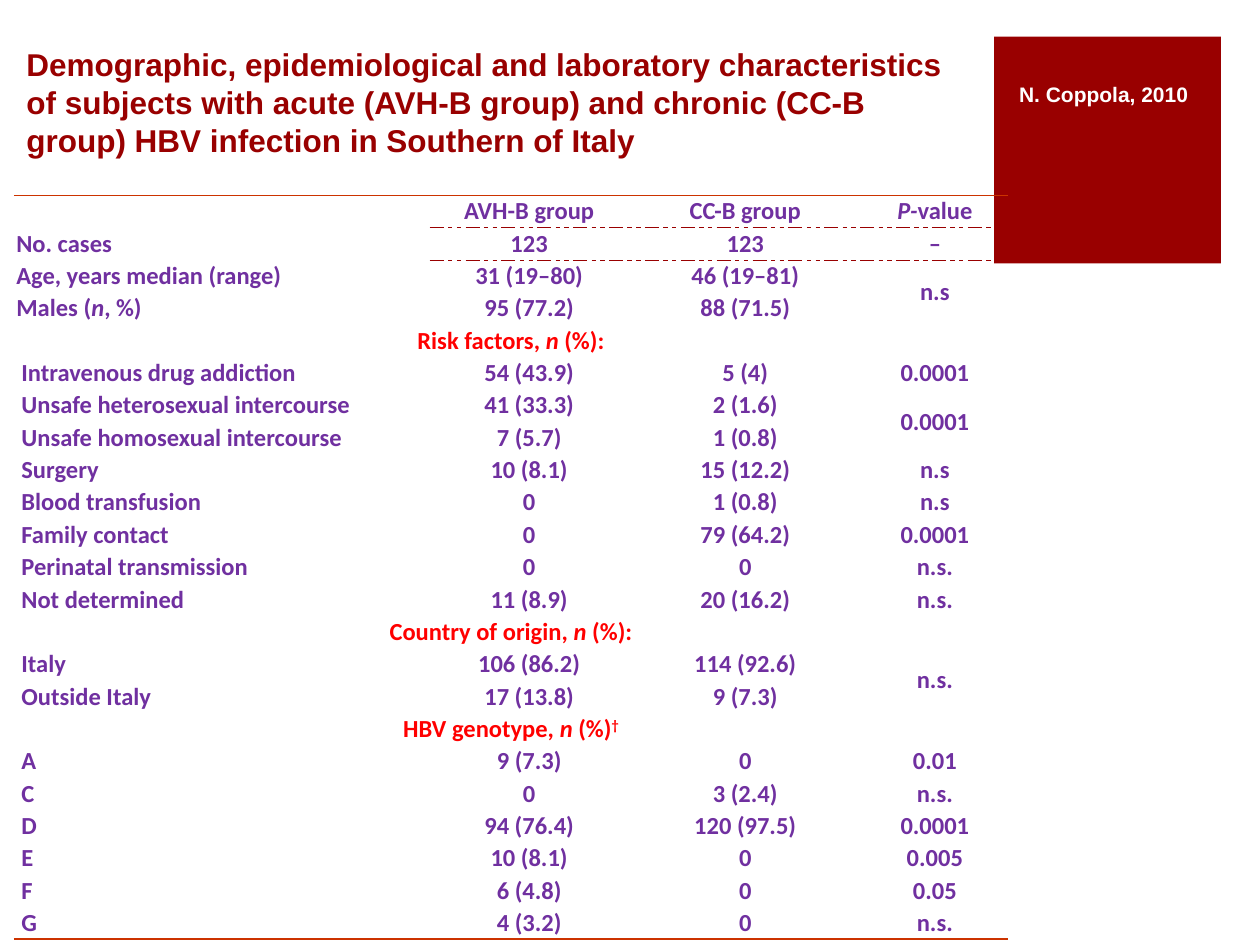
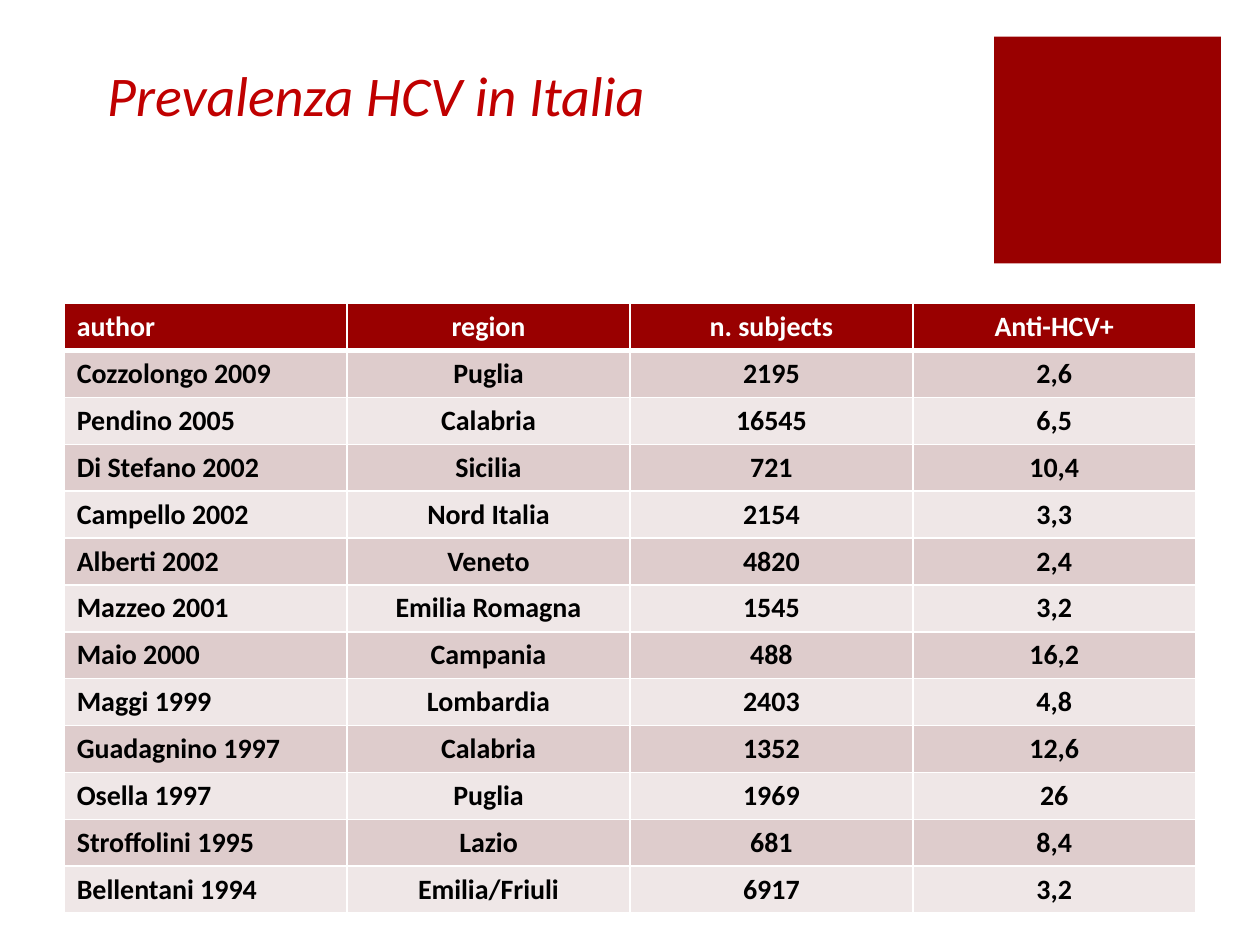
from lxml.etree import SubElement
from pptx import Presentation
from pptx.dml.color import RGBColor
from pptx.enum.shapes import MSO_SHAPE
from pptx.enum.text import MSO_ANCHOR, MSO_AUTO_SIZE, PP_ALIGN
from pptx.oxml.ns import qn
from pptx.util import Inches, Pt

THEME = {
    "band": "990000",
    "rule": "CC3300",
    "white": "FFFFFF",
    "stripes": ["EFE7E7", "DECCCC"],
    "heading": {"name": "Arial", "size": 18, "bold": True, "color": "990000"},
    "credit": {"name": "Arial", "size": 12, "bold": True, "color": "FFFFFF"},
    "display": {"name": "Calibri", "size": 32, "italic": True, "color": "C00000"},
    "patient": {"name": "Calibri", "size": 14, "bold": True, "color": "7030A0"},
    "section": {"name": "Calibri", "size": 14, "bold": True, "color": "FF0000"},
    "study_head": {"name": "Calibri", "size": 16, "bold": True, "color": "FFFFFF"},
    "study": {"name": "Calibri", "size": 16, "bold": True, "color": "000000"},
}
NO_STYLE = "{2D5ABB26-0587-4C30-8999-92F81FD0307C}"
ITALIC_PARTS = ("n", "P-")

PATIENTS = [
    ["", "AVH-B group", "CC-B group", "P-|value"],
    ["No. cases", "123", "123", "–"],
    ["Age, years median (range)", "31 (19–80)", "46 (19–81)", "n.s"],
    ["Males (|n|, %)", "95 (77.2)", "88 (71.5)", None],
    ["Risk factors, |n| (%):"],
    ["Intravenous drug addiction", "54 (43.9)", "5 (4)", "0.0001"],
    ["Unsafe heterosexual intercourse", "41 (33.3)", "2 (1.6)", "0.0001"],
    ["Unsafe homosexual intercourse", "7 (5.7)", "1 (0.8)", None],
    ["Surgery", "10 (8.1)", "15 (12.2)", "n.s"],
    ["Blood transfusion", "0", "1 (0.8)", "n.s"],
    ["Family contact", "0", "79 (64.2)", "0.0001"],
    ["Perinatal transmission", "0", "0", "n.s."],
    ["Not determined", "11 (8.9)", "20 (16.2)", "n.s."],
    ["Country of origin, |n| (%):"],
    ["Italy", "106 (86.2)", "114 (92.6)", "n.s."],
    ["Outside Italy", "17 (13.8)", "9 (7.3)", None],
    ["HBV genotype, |n| (%)|†"],
    ["A", "9 (7.3)", "0", "0.01"],
    ["C", "0", "3 (2.4)", "n.s."],
    ["D", "94 (76.4)", "120 (97.5)", "0.0001"],
    ["E", "10 (8.1)", "0", "0.005"],
    ["F", "6 (4.8)", "0", "0.05"],
    ["G", "4 (3.2)", "0", "n.s."],
]

STUDIES = [
    ["author", "region", "n. subjects", "Anti-HCV+"],
    ["Cozzolongo 2009", "Puglia", "2195", "2,6"],
    ["Pendino 2005", "Calabria", "16545", "6,5"],
    ["Di Stefano 2002", "Sicilia", "721", "10,4"],
    ["Campello 2002", "Nord Italia", "2154", "3,3"],
    ["Alberti 2002", "Veneto", "4820", "2,4"],
    ["Mazzeo 2001", "Emilia Romagna", "1545", "3,2"],
    ["Maio 2000", "Campania", "488", "16,2"],
    ["Maggi 1999", "Lombardia", "2403", "4,8"],
    ["Guadagnino 1997", "Calabria", "1352", "12,6"],
    ["Osella 1997", "Puglia", "1969", "26"],
    ["Stroffolini 1995", "Lazio", "681", "8,4"],
    ["Bellentani 1994", "Emilia/Friuli", "6917", "3,2"],
]


def write(tf, text, style, align=PP_ALIGN.LEFT):
    p = tf.paragraphs[0]
    p.alignment = align
    for part in filter(None, text.split("|")):
        r = p.add_run()
        r.text = part
        for key, value in style.items():
            if key == "color":
                r.font.color.rgb = RGBColor.from_string(value)
            else:
                setattr(r.font, key, Pt(value) if key == "size" else value)
        if part in ITALIC_PARTS:
            r.font.italic = True
        if part == "†":
            r.font._element.set("baseline", "30000")
    if not text:
        SubElement(p._p, qn("a:endParaRPr"), sz=str(style["size"] * 100))


def border(cell, side, color, width, dash="solid"):
    ln = SubElement(cell._tc.get_or_add_tcPr(), qn("a:ln" + side), w=str(Pt(width)))
    fill = SubElement(ln, qn("a:solidFill"))
    SubElement(fill, qn("a:srgbClr"), val=color)
    SubElement(ln, qn("a:prstDash"), val=dash)


prs = Presentation()
prs.slide_width, prs.slide_height = Inches(10), Inches(7.5)

pages = [
    {"title": "Demographic, epidemiological and laboratory characteristics of subjects with acute "
              "(AVH-B group) and chronic (CC-B group) HBV infection in Southern of Italy",
     "style": "heading", "at": (0.11, 0.21, 7.51, 1.1), "wrap": True,
     "table": (0.11, 1.55, 7.89, 5.82), "cols": (3.3, 1.58, 1.85, 1.16), "rows": PATIENTS},
    {"title": "Prevalenza HCV in Italia",
     "style": "display", "at": (0.75, 0.42, 4.48, 0.64), "wrap": False,
     "table": (0.51, 2.41, 8.98, 4.77), "cols": (2.245,) * 4, "rows": STUDIES},
]
slides, tables = [], []
for page in pages:
    s = prs.slides.add_slide(prs.slide_layouts[5])
    title = s.shapes.title
    title.left, title.top, title.width, title.height = map(Inches, page["at"])
    tf = title.text_frame
    for key, value in {"word_wrap": page["wrap"], "auto_size": MSO_AUTO_SIZE.NONE,
                       "vertical_anchor": MSO_ANCHOR.BOTTOM}.items():
        setattr(tf, key, value)
    write(tf, page["title"], THEME[page["style"]])

    rows = page["rows"]
    frame = s.shapes.add_table(len(rows), 4, *map(Inches, page["table"]))
    for style_id in frame.element.iter(qn("a:tableStyleId")):
        style_id.text = NO_STYLE
    table = frame.table
    table.horz_banding = False
    for column, width in zip(table.columns, page["cols"]):
        column.width = Inches(width)
    for row in table.rows:
        row.height = Inches(page["table"][3] / len(rows))
    slides.append(s)
    tables.append(table)

band = slides[0].shapes.add_shape(MSO_SHAPE.RECTANGLE, Inches(7.89), Inches(0.29), Inches(1.8), Inches(1.8))
band.shadow.inherit = False
band.fill.solid()
band.fill.fore_color.rgb = RGBColor.from_string(THEME["band"])
band.line.fill.background()
band.element.nvSpPr.cNvPr.set("id", "20")
prs.slide_master.shapes.element.insert(2, band.element)

patients, studies = tables
last = len(PATIENTS) - 1
for i, row in enumerate(PATIENTS):
    is_section = len(row) == 1
    style = THEME["section" if is_section else "patient"]
    for j in range(4):
        cell = patients.cell(i, j)
        text = (row[j] if j < len(row) else None) or ""
        indent = 0.06 if i > 4 and j == 0 and not is_section else 0.02
        for key, value in {"margin_left": Inches(indent), "margin_right": Inches(0.02),
                           "margin_top": Inches(0.01), "margin_bottom": Inches(0.01),
                           "vertical_anchor": MSO_ANCHOR.MIDDLE}.items():
            setattr(cell, key, value)
        centred = is_section or j > 0
        write(cell.text_frame, text, style, PP_ALIGN.CENTER if centred else PP_ALIGN.LEFT)
        if i == 0:
            border(cell, "T", THEME["rule"], 1)
        if i in (0, 1) and j > 0:
            border(cell, "B" if i == 0 else "T", THEME["band"], 0.25, "sysDashDotDot")
        if i == last:
            border(cell, "B", THEME["rule"], 1)
        cell.fill.background()
    if is_section:
        patients.cell(i, 0).merge(patients.cell(i, 3))
    elif row[3] is None:
        patients.cell(i - 1, 3).merge(patients.cell(i, 3))
patients.cell(0, 3).vertical_anchor = MSO_ANCHOR.TOP

credit = slides[0].shapes.add_textbox(Inches(7.99), Inches(0.6), Inches(1.56), Inches(0.3))
credit.text_frame.word_wrap = False
credit.text_frame.auto_size = MSO_AUTO_SIZE.SHAPE_TO_FIT_TEXT
write(credit.text_frame, "N. Coppola, 2010", THEME["credit"])

for i, row in enumerate(STUDIES):
    style = THEME["study" if i else "study_head"]
    fill = THEME["stripes"][i % 2] if i else THEME["band"]
    for j, text in enumerate(row):
        cell = studies.cell(i, j)
        write(cell.text_frame, text, style, PP_ALIGN.CENTER if j else PP_ALIGN.LEFT)
        widths = {"L": 1, "R": 1, "T": 3 if i == 1 else 1, "B": 1 if i else 3}
        for side, width in widths.items():
            border(cell, side, THEME["white"], width)
        cell.fill.solid()
        cell.fill.fore_color.rgb = RGBColor.from_string(fill)

prs.save("out.pptx")
